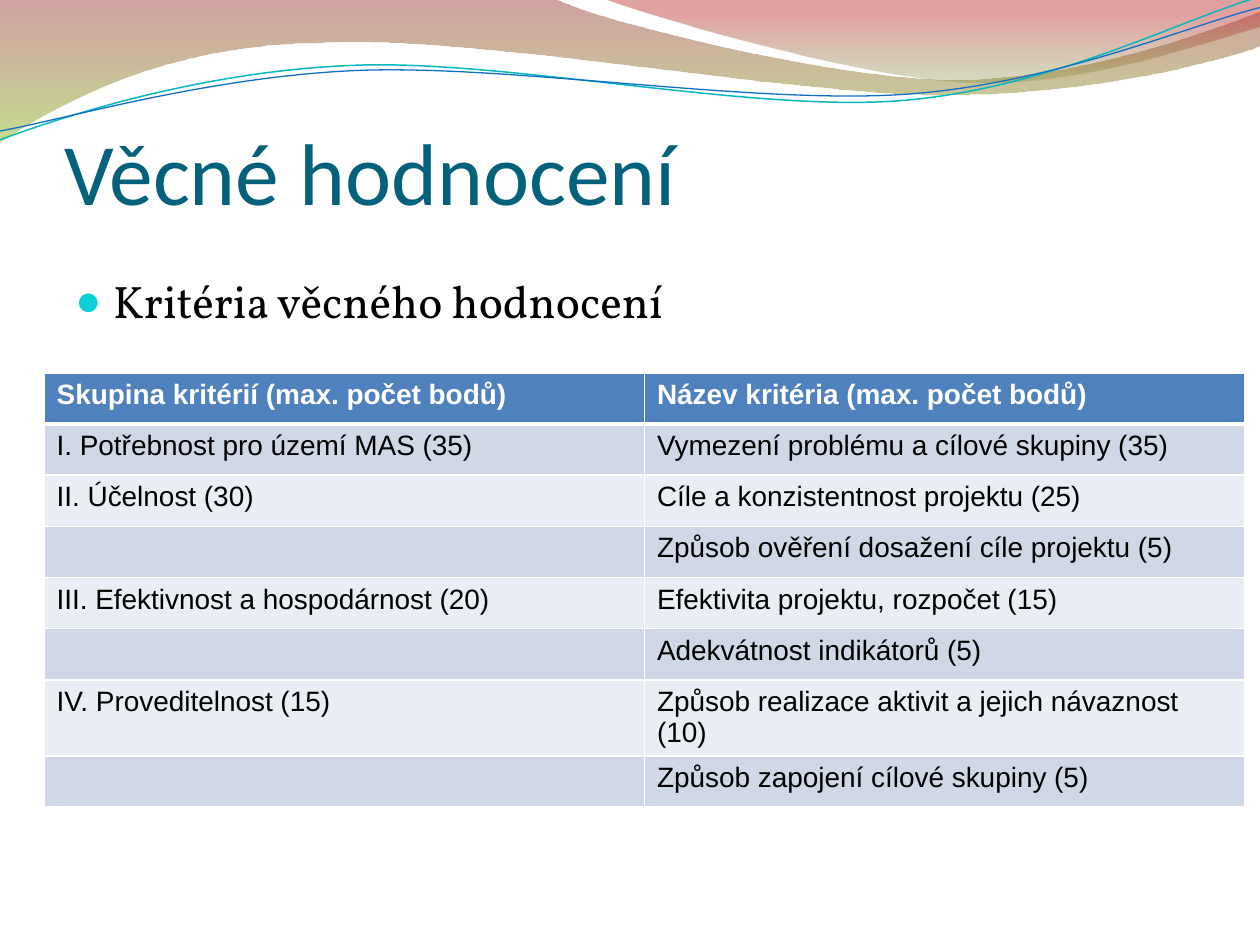
import dataclasses
import math

import lxml.etree
import pptx
import pptx.dml.color
import pptx.enum.text
import pptx.oxml.ns
import pptx.util

Inches = pptx.util.Inches
Pt = pptx.util.Pt
qn = pptx.oxml.ns.qn


@dataclasses.dataclass(frozen=True)
class Theme:
    title_font: str = "Calibri"
    body_font: str = "Vollkorn"
    table_font: str = "Arial"
    title_size: int = 50
    body_size: int = 26
    table_size: int = 16
    title: str = "04617B"
    text: str = "000000"
    bullet: str = "0BD0D9"
    white: str = "FFFFFF"
    header: str = "4F81BD"
    bands: tuple = ("D0D8E8", "E9EDF4")
    teal: str = "09B7BF"
    blue: str = "0F6FC6"
    # Gradient stops: position, colour, opacity in percent
    wide_wave: tuple = ((0, "973330", 45), (1, "95C238", 55))
    corner_wave: tuple = ((0, "769537", 30), (0.8, "BE3330", 45))


def rgb(value):
    return pptx.dml.color.RGBColor.from_string(value)


def rotate(point, pivot, degrees):
    """Turn a point clockwise about a pivot."""
    angle = math.radians(degrees)
    x, y = point[0] - pivot[0], point[1] - pivot[1]
    return (pivot[0] + x * math.cos(angle) - y * math.sin(angle),
            pivot[1] + x * math.sin(angle) + y * math.cos(angle))


class SlideBuilder:
    def __init__(self, presentation, theme):
        self.theme = theme
        self.slide = presentation.slides.add_slide(presentation.slide_layouts[5])

    def outline(self, segments, close, pivot=(0, 0), rotation=0):
        """Draw straight segments (one point) and cubic curves (three points)."""
        points = [tuple(Inches(value) for value in rotate(point, pivot, -rotation))
                  for segment in segments for point in segment]
        builder = self.slide.shapes.build_freeform(*points[0])
        builder.add_line_segments(points[1:], close=close)
        shape = builder.convert_to_shape()
        shape.shadow.inherit = False
        shape.rotation = rotation
        lines = iter(list(shape.element.iter(qn("a:lnTo"))))
        for segment in segments[1:]:
            parts = [next(lines) for _ in segment]
            if len(parts) == 3:
                curve = lxml.etree.Element(qn("a:cubicBezTo"))
                parts[0].addprevious(curve)
                for part in parts:
                    curve.append(part[0])
                    part.getparent().remove(part)
        return shape

    def wave(self, segments, stops, angle):
        shape = self.outline(segments, close=True)
        shape.line.fill.background()
        shape.fill.gradient()
        shape.fill.gradient_angle = angle
        for stop, (position, color, _) in zip(shape.fill.gradient_stops, stops):
            stop.position = position
            stop.color.rgb = rgb(color)
        for element, (_, _, opacity) in zip(shape.element.iter(qn("a:srgbClr")), stops):
            lxml.etree.SubElement(element, qn("a:alpha"), val=str(opacity * 1000))

    def curve(self, segments, color, width, pivot):
        shape = self.outline(segments, close=False, pivot=pivot, rotation=357.3)
        shape.fill.background()
        shape.line.color.rgb = rgb(color)
        shape.line.width = Pt(width)

    def run(self, paragraph, text, font, size, color, bold=False):
        run = paragraph.add_run()
        run.text = text
        run.font.name = font
        run.font.size = Pt(size)
        run.font.bold = bold
        run.font.color.rgb = rgb(color)

    def title(self, text, left, top, width, height):
        shape = self.slide.shapes.title
        shape.left, shape.top = Inches(left), Inches(top)
        shape.width, shape.height = Inches(width), Inches(height)
        shape.element.getparent().append(shape.element)  # in front of the waves
        frame = shape.text_frame
        frame.auto_size = pptx.enum.text.MSO_AUTO_SIZE.NONE
        frame.vertical_anchor = pptx.enum.text.MSO_ANCHOR.BOTTOM
        frame.margin_left = frame.margin_right = frame.margin_bottom = 0
        frame.margin_top = Inches(0.05)
        paragraph = frame.paragraphs[0]
        paragraph.alignment = pptx.enum.text.PP_ALIGN.LEFT
        theme = self.theme
        self.run(paragraph, text, theme.title_font, theme.title_size, theme.title)

    def bullet(self, text, left, top, width, height):
        theme = self.theme
        box = self.slide.shapes.add_textbox(
            Inches(left), Inches(top), Inches(width), Inches(height))
        box.text_frame.word_wrap = True
        paragraph = box.text_frame.paragraphs[0]
        properties = paragraph._p.get_or_add_pPr()
        properties.set("marL", str(Inches(0.3)))
        properties.set("indent", str(-Inches(0.3)))
        color = lxml.etree.SubElement(properties, qn("a:buClr"))
        lxml.etree.SubElement(color, qn("a:srgbClr"), val=theme.bullet)
        lxml.etree.SubElement(properties, qn("a:buSzPct"), val="95000")
        lxml.etree.SubElement(properties, qn("a:buFont"), typeface=theme.table_font)
        lxml.etree.SubElement(properties, qn("a:buChar"), char="●")
        self.run(paragraph, text, theme.body_font, theme.body_size, theme.text)

    def borders(self, cell, widths):
        """Draw the left, right, top and bottom borders with widths in points."""
        properties = cell._tc.get_or_add_tcPr()
        for side, width in zip("LRTB", widths):
            line = lxml.etree.SubElement(properties, qn(f"a:ln{side}"), w=str(Pt(width)))
            fill = lxml.etree.SubElement(line, qn("a:solidFill"))
            lxml.etree.SubElement(fill, qn("a:srgbClr"), val=self.theme.white)

    def table(self, rows, left, top, width, height):
        theme = self.theme
        table = self.slide.shapes.add_table(
            len(rows), len(rows[0]), Inches(left), Inches(top),
            Inches(width), Inches(height)).table
        for row_index, texts in enumerate(rows):
            header = row_index == 0
            for cell, text in zip(table.rows[row_index].cells, texts):
                self.borders(cell, (1, 1, 3 if row_index == 1 else 1, 3 if header else 1))
                cell.margin_bottom = Inches(0.02)
                cell.fill.solid()
                cell.fill.fore_color.rgb = rgb(
                    theme.header if header else theme.bands[(row_index - 1) % 2])
                if text:
                    self.run(cell.text_frame.paragraphs[0], text, theme.table_font,
                             theme.table_size, theme.white if header else theme.text, header)


WIDE_WAVE = [
    ((0, 0),), ((4.4, -0.01),),
    ((4.76, 0.17), (6.64, 0.63), (7.58, 0.63)), ((8.53, 0.63), (9.58, 0.26), (10, 0.09)),
    ((10.01, 0.36),),
    ((9.83, 0.44), (8.7, 0.76), (7.46, 0.75)), ((6.22, 0.75), (3.82, 0.28), (2.57, 0.34)),
    ((1.29, 0.35), (0.46, 0.83), (-0.01, 1.13)), ((0, 0),)]
CORNER_WAVE = [
    ((4.79, -0.01),),
    ((5.09, 0.11), (6.82, 0.62), (7.69, 0.65)), ((8.56, 0.69), (9.61, 0.32), (10, 0.21)),
    ((10, 0),), ((4.79, -0.01),)]
TEAL_CURVE = [
    ((0, 1.11),), ((0.48, 0.93), (1.58, 0.57), (2.77, 0.52)),
    ((3.95, 0.46), (5.93, 0.89), (7.13, 0.8)), ((8.33, 0.71), (9.38, 0.15), (9.98, -0.02))]
BLUE_CURVE = [
    ((0, 1.04),), ((0.47, 0.96), (1.64, 0.61), (2.83, 0.56)),
    ((4.03, 0.51), (5.97, 0.83), (7.17, 0.75)), ((8.36, 0.67), (9.41, 0.21), (10, 0.06))]
CRITERIA = [
    ("Skupina kritérií (max. počet bodů)", "Název kritéria (max. počet bodů)"),
    ("I. Potřebnost pro území MAS (35)", "Vymezení problému a cílové skupiny (35)"),
    ("II. Účelnost (30)", "Cíle a konzistentnost projektu (25)"),
    ("", "Způsob ověření dosažení cíle projektu (5)"),
    ("III. Efektivnost a hospodárnost (20)", "Efektivita projektu, rozpočet (15)"),
    ("", "Adekvátnost indikátorů (5)"),
    ("IV. Proveditelnost (15)", "Způsob realizace aktivit a jejich návaznost (10)"),
    ("", "Způsob zapojení cílové skupiny (5)")]


def main():
    presentation = pptx.Presentation()
    presentation.slide_width, presentation.slide_height = Inches(10), Inches(7.5)
    theme = Theme()
    builder = SlideBuilder(presentation, theme)
    # Gradient angles run counter-clockwise
    builder.wave(WIDE_WAVE, theme.wide_wave, 270)
    builder.wave(CORNER_WAVE, theme.corner_wave, 90)
    builder.curve(TEAL_CURVE, theme.teal, 0.85, pivot=(4.99, 0.58))
    builder.curve(BLUE_CURVE, theme.blue, 0.75, pivot=(5, 0.59))
    builder.title("Věcné hodnocení", 0.51, 0.52, 9, 1.25)
    builder.bullet("Kritéria věcného hodnocení", 0.5, 2.12, 9, 4.8)
    builder.table(CRITERIA, 0.35, 2.96, 9.53, 3.25)
    presentation.save("out.pptx")


if __name__ == "__main__":
    main()
